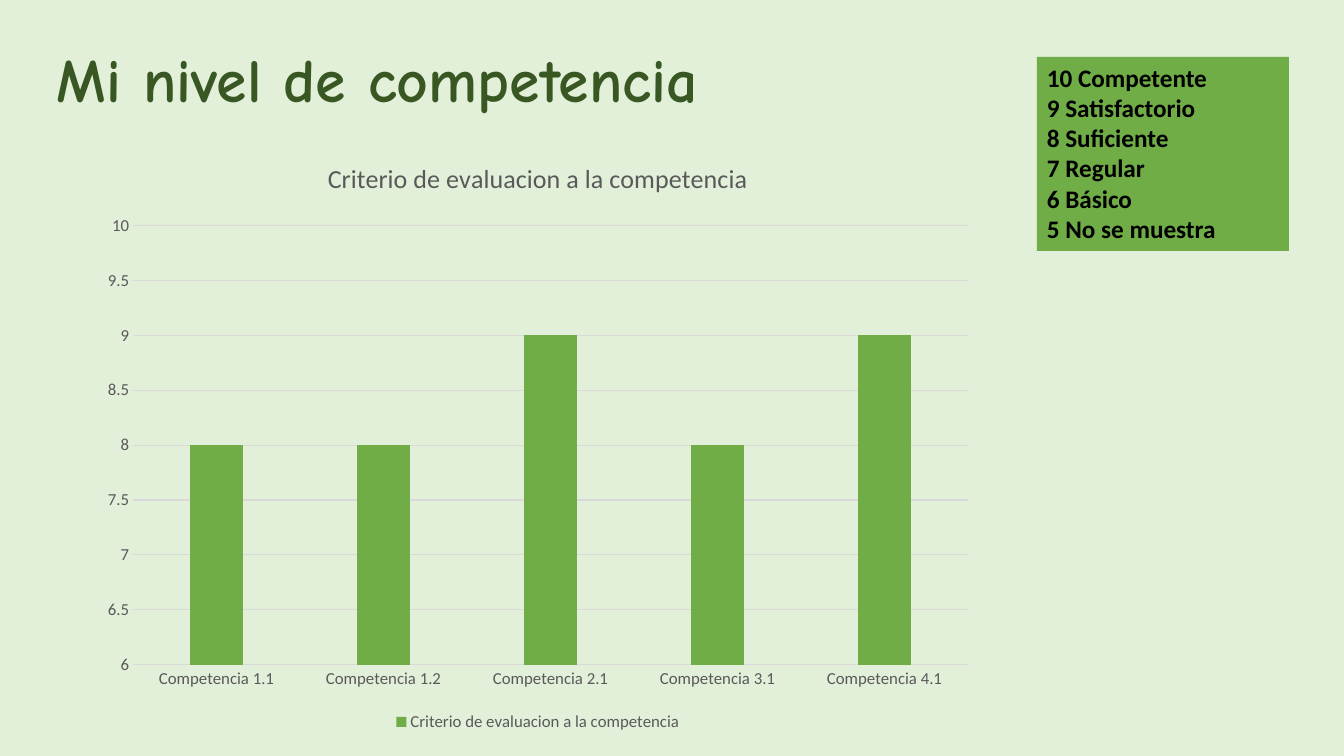
from pptx import Presentation
from pptx.chart.data import CategoryChartData
from pptx.dml.color import RGBColor
from pptx.enum.chart import XL_CHART_TYPE, XL_LEGEND_POSITION, XL_TICK_MARK
from pptx.enum.shapes import MSO_SHAPE
from pptx.enum.text import MSO_ANCHOR, PP_ALIGN
from pptx.util import Pt

SLIDE_WIDTH, SLIDE_HEIGHT = 1344, 756
EMU_PER_PX = 12192000 / SLIDE_WIDTH
COLORS = {
    "background": "E2F0D9",
    "heading": "385723",
    "green": "70AD47",
    "axis_text": "595959",
    "grid": "D9D9D9",
    "black": "000000",
}
CRITERION = "Criterio de evaluacion a la competencia"
SCORES = {
    "Competencia 1.1": 8,
    "Competencia 1.2": 8,
    "Competencia 2.1": 9,
    "Competencia 3.1": 8,
    "Competencia 4.1": 9,
}
LEVELS = [
    "10 Competente",
    "9 Satisfactorio",
    "8 Suficiente",
    "7 Regular",
    "6 Básico",
    "5 No se muestra",
]


def px(*lengths):
    return [round(length * EMU_PER_PX) for length in lengths]


def color(name):
    return RGBColor.from_string(COLORS[name])


def paint(fill, name):
    fill.solid()
    fill.fore_color.rgb = color(name)


def style_font(font, size, color_name, family="Calibri", bold=False):
    font.size = Pt(size)
    font.name = family
    font.bold = bold
    font.color.rgb = color(color_name)


def style_line(line, name):
    line.width = Pt(0.75)
    line.color.rgb = color(name)


def write_lines(frame, lines, **font_style):
    frame.word_wrap = True
    for index, line in enumerate(lines):
        paragraph = frame.paragraphs[0] if index == 0 else frame.add_paragraph()
        paragraph.alignment = PP_ALIGN.LEFT
        run = paragraph.add_run()
        run.text = line
        style_font(run.font, **font_style)


def add_heading(slide, text, box):
    heading = slide.shapes.add_textbox(*px(*box))
    write_lines(heading.text_frame, [text], size=44, color_name="heading",
                family="Comic Neue", bold=True)


def add_scale(slide, levels, box):
    """Add the filled box that explains the scores."""
    scale = slide.shapes.add_shape(MSO_SHAPE.RECTANGLE, *px(*box))
    scale.shadow.inherit = False
    paint(scale.fill, "green")
    scale.line.fill.background()
    scale.text_frame.vertical_anchor = MSO_ANCHOR.TOP
    write_lines(scale.text_frame, levels, size=18, color_name="black", bold=True)


def style_axis(axis):
    axis.major_tick_mark = axis.minor_tick_mark = XL_TICK_MARK.NONE
    style_font(axis.tick_labels.font, 12, "axis_text")


def add_score_chart(slide, criterion, scores, box):
    score_data = CategoryChartData()
    score_data.categories = list(scores)
    score_data.add_series(criterion, list(scores.values()))
    chart = slide.shapes.add_chart(
        XL_CHART_TYPE.COLUMN_CLUSTERED, *px(*box), score_data).chart
    style_font(chart.font, 10, "black")

    chart.has_title = True
    caption = chart.chart_title.text_frame.paragraphs[0].add_run()
    caption.text = criterion
    style_font(caption.font, 18.6, "axis_text")
    chart.chart_title.include_in_layout = False

    chart.has_legend = True
    chart.legend.position = XL_LEGEND_POSITION.BOTTOM
    chart.legend.include_in_layout = False
    style_font(chart.legend.font, 12, "axis_text")

    style_axis(chart.category_axis)
    style_line(chart.category_axis.format.line, "grid")
    score_axis = chart.value_axis
    style_axis(score_axis)
    score_axis.format.line.fill.background()
    score_axis.minimum_scale, score_axis.maximum_scale = 6, 10
    score_axis.major_unit = 0.5
    style_line(score_axis.major_gridlines.format.line, "grid")

    columns = chart.plots[0]
    columns.vary_by_categories = False
    columns.gap_width = 219
    columns.overlap = -27
    paint(columns.series[0].format.fill, "green")


def main():
    deck = Presentation()
    deck.slide_width, deck.slide_height = px(SLIDE_WIDTH, SLIDE_HEIGHT)
    slide = deck.slides.add_slide(deck.slide_layouts[6])
    paint(slide.background.fill, "background")
    add_heading(slide, "Mi nivel de competencia", (47, 36, 874, 85))
    add_score_chart(slide, CRITERION, SCORES, (90, 138, 896, 598))
    add_scale(slide, LEVELS, (1037, 57, 252, 194))
    deck.save("out.pptx")


if __name__ == "__main__":
    main()
